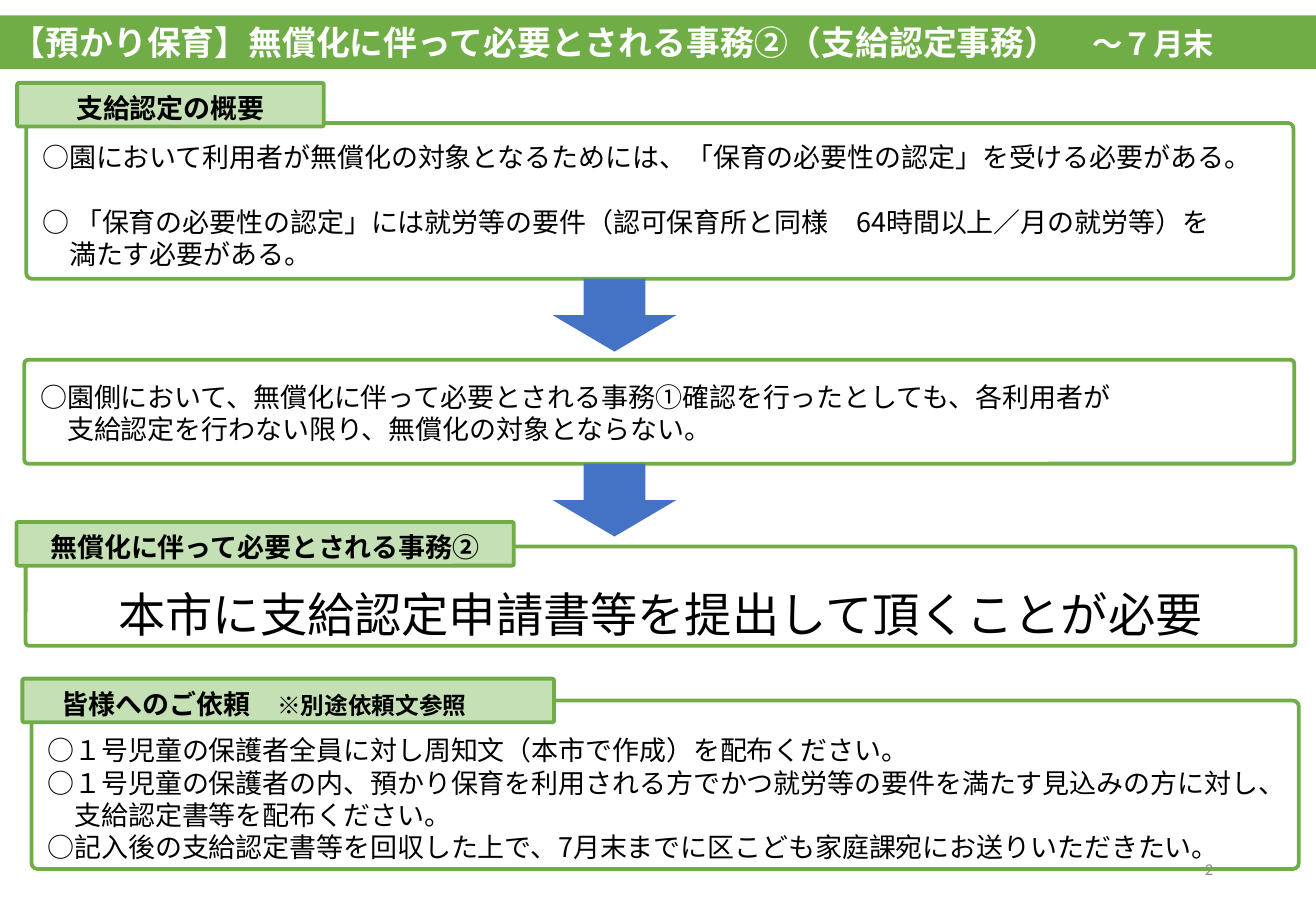
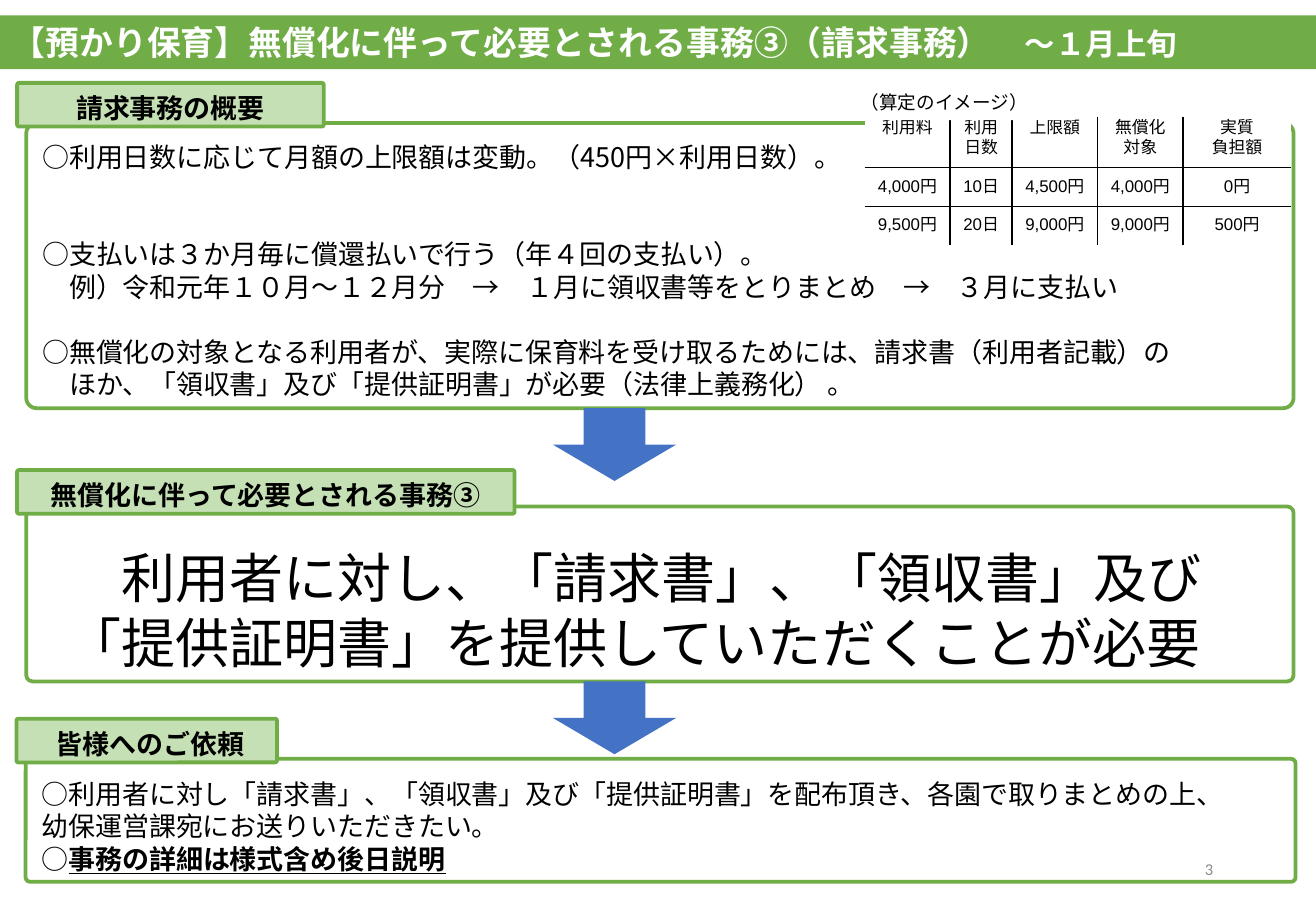
from dataclasses import dataclass
from lxml.etree import SubElement
from pptx import Presentation
from pptx.dml.color import RGBColor
from pptx.enum.shapes import MSO_SHAPE as SHAPE
from pptx.enum.text import MSO_ANCHOR as ANCHOR, PP_ALIGN as ALIGN
from pptx.oxml.ns import qn
from pptx.util import Inches, Pt


@dataclass(frozen=True)
class Theme:
    green: str = "70AD47"
    pale: str = "C5E0B4"
    blue: str = "4472C4"
    white: str = "FFFFFF"
    black: str = "000000"
    grey: str = "8C8C8C"
    jp: str = "Noto Sans CJK JP"
    latin: str = "Arial"
    number: str = "Calibri"
    title: float = 20
    date: float = 18
    body: float = 16
    note: float = 14
    label: float = 11
    cell: float = 10
    page: float = 9.8
    leading: float = 1.2
    border: float = 2.25


T = Theme()
prs = Presentation()
prs.slide_width, prs.slide_height = Inches(10.83), Inches(7.5)
# Grid of 100 columns by 100 rows
COL, ROW = prs.slide_width / 100, prs.slide_height / 100


def write(tf, lines, size=T.body, bold=False, color=T.black, font=T.jp, align=ALIGN.LEFT,
          anchor=ANCHOR.TOP, inset=(0.1, 0.05, 0.1, 0.05), gaps=None):
    """Each line is a string or a list of (text, format) runs; gaps maps a line to skipped lines."""
    tf.word_wrap, tf.vertical_anchor = True, anchor
    tf.margin_left, tf.margin_top, tf.margin_right, tf.margin_bottom = map(Inches, inset)
    for i, line in enumerate(lines):
        p = tf.paragraphs[0] if i == 0 else tf.add_paragraph()
        p.alignment, p.line_spacing = align, Pt(size * T.leading)
        p.space_before = Pt(size * T.leading * (gaps or {}).get(i, 0))
        for text, fmt in [(line, {})] if isinstance(line, str) else line:
            r = p.add_run()
            r.text = text
            r.font.name, r.font.size = font, Pt(fmt.get("size", size))
            r.font.bold, r.font.underline = fmt.get("bold", bold), fmt.get("underline", False)
            r.font.color.rgb = RGBColor.from_string(color)
            SubElement(r.font._element, qn("a:ea")).set("typeface", T.jp)


def box(s, kind, x, y, w, h, fill=None, line=None, adj=None):
    sp = s.shapes.add_shape(kind, int(x * COL), int(y * ROW), int(w * COL), int(h * ROW))
    sp.shadow.inherit = False
    if adj:
        sp.adjustments[0] = adj
    if fill:
        sp.fill.solid()
        sp.fill.fore_color.rgb = RGBColor.from_string(fill)
    else:
        sp.fill.background()
    if line:
        sp.line.color.rgb, sp.line.width = RGBColor.from_string(line), Pt(T.border)
    else:
        sp.line.fill.background()
    return sp


# Content: panels (x, y, w, h) with an optional tab (y, w) and arrow below
DECK = [
    dict(page="2", title="【預かり保育】無償化に伴って必要とされる事務②（支給認定事務）　", date="～７月末", panels=[
        dict(at=(2, 13.5, 96.3, 17.1), tab=(9.1, 23.3), head=["支給認定の概要"], arrow=True,
             text_y=14.8, gaps={1: 1}, lines=[
                 "○園において利用者が無償化の対象となるためには、「保育の必要性の認定」を受ける必要がある。",
                 "○ 「保育の必要性の認定」には就労等の要件（認可保育所と同様　64時間以上／月の就労等）を",
                 "　満たす必要がある。"]),
        dict(at=(1.85, 39.5, 96.5, 11.4), arrow=True, text_y=41.1, lines=[
            "○園側において、無償化に伴って必要とされる事務①確認を行ったとしても、各利用者が",
            "　支給認定を行わない限り、無償化の対象とならない。"]),
        dict(at=(1.95, 60, 96.5, 10.9), tab=(57.3, 37.8), head=["無償化に伴って必要とされる事務②"],
             text_x=1.55, text_y=63.6, size=28, align=ALIGN.CENTER,
             lines=["本市に支給認定申請書等を提出して頂くことが必要"]),
        dict(at=(2.4, 76.9, 96.3, 18.5), tab=(74.5, 40.4), tab_align=ALIGN.LEFT,
             head=[[("　皆様へのご依頼　", {}), ("※別途依頼文参照", {"size": T.note})]],
             text_y=79.9, lines=[
                 "○１号児童の保護者全員に対し周知文（本市で作成）を配布ください。",
                 "○１号児童の保護者の内、預かり保育を利用される方でかつ就労等の要件を満たす見込みの方に対し、",
                 "　支給認定書等を配布ください。",
                 "○記入後の支給認定書等を回収した上で、7月末までに区こども家庭課宛にお送りいただきたい。"]),
    ]),
    dict(page="3", title="【預かり保育】無償化に伴って必要とされる事務③（請求事務）　", date="～１月上旬", panels=[
        dict(at=(2, 13.5, 96.3, 31.3), tab=(9.1, 23.3), head=["請求事務の概要"], arrow=True,
             text_y=14.8, gaps={1: 2, 3: 1}, lines=[
                 "○利用日数に応じて月額の上限額は変動。（450円×利用日数）。",
                 "○支払いは３か月毎に償還払いで行う（年４回の支払い）。",
                 "　例）令和元年１０月～１２月分　→　１月に領収書等をとりまとめ　→　３月に支払い",
                 "○無償化の対象となる利用者が、実際に保育料を受け取るためには、請求書（利用者記載）の",
                 "　ほか、「領収書」及び「提供証明書」が必要（法律上義務化） 。"]),
        dict(at=(2, 55.6, 96.3, 19.2), tab=(51.6, 37.8), head=["無償化に伴って必要とされる事務③"],
             arrow=True, text_x=4.2, text_y=59.1, size=32, lines=[
                 "　利用者に対し、「請求書」、「領収書」及び",
                 "「提供証明書」を提供していただくことが必要"]),
        dict(at=(1.95, 83.3, 96.5, 13.5), tab=(78.9, 19.8), tab_align=ALIGN.LEFT,
             head=["　皆様へのご依頼"], text_y=84.7, lines=[
                 "○利用者に対し「請求書」、「領収書」及び「提供証明書」を配布頂き、各園で取りまとめの上、",
                 "幼保運営課宛にお送りいただきたい。",
                 [("○", {}), ("事務の詳細は様式含め後日説明", {"bold": True, "underline": True})]]),
    ]),
]

for page in DECK:
    s = prs.slides.add_slide(prs.slide_layouts[6])

    # Title band
    band = box(s, SHAPE.RECTANGLE, 0, 1.7, 100, 5.9, T.green)
    write(band.text_frame, [[(page["title"], {}), (page["date"], {"size": T.date})]],
          size=T.title, bold=True, color=T.white, anchor=ANCHOR.MIDDLE)

    # Panels with their arrows, tabs and text
    for panel in page["panels"]:
        x, y, w, h = panel["at"]
        box(s, SHAPE.ROUNDED_RECTANGLE, x, y, w, h, line=T.green, adj=0.036)
        if panel.get("arrow"):
            box(s, SHAPE.DOWN_ARROW, 42, y + h, 9.4, 8, T.blue)
        if "tab" in panel:
            tab_y, tab_w = panel["tab"]
            tab = box(s, SHAPE.ROUNDED_RECTANGLE, x - 0.7, tab_y, tab_w, 4.8, T.pale, T.green, 0.042)
            write(tab.text_frame, panel["head"], bold=True, anchor=ANCHOR.MIDDLE,
                  align=panel.get("tab_align", ALIGN.CENTER), inset=(0.1, 0.1, 0.1, 0.05))
        text_x, text_y = panel.get("text_x", x + 0.3), panel["text_y"]
        tb = s.shapes.add_textbox(int(text_x * COL), int(text_y * ROW),
                                  int(min(97.3, 100 - text_x) * COL), int((y + h - text_y) * ROW))
        write(tb.text_frame, panel["lines"], size=panel.get("size", T.body),
              align=panel.get("align", ALIGN.LEFT), gaps=panel.get("gaps"))

    # Page number
    tb = s.shapes.add_textbox(int(70.6 * COL), int(92.7 * ROW), int(22.5 * COL), int(5.3 * ROW))
    write(tb.text_frame, [page["page"]], size=T.page, color=T.grey, font=T.number,
          align=ALIGN.RIGHT, anchor=ANCHOR.MIDDLE)

# Worked example on the last slide
ROWS = [
    ["利用料", "利用\n日数", "上限額", "無償化\n対象", "実質\n負担額"],
    ["4,000円", "10日", "4,500円", "4,000円", "0円"],
    ["9,500円", "20日", "9,000円", "9,000円", "500円"],
]
COL_W, ROW_H = [6.5, 4.7, 6.5, 6.5, 8.2], [5.6, 4.25, 4.25]
frame = s.shapes.add_table(len(ROW_H), len(COL_W), int(65.7 * COL), int(12.8 * ROW),
                           int(sum(COL_W) * COL), int(sum(ROW_H) * ROW))
tbl = frame.table
tbl.first_row = tbl.horz_banding = False
for column, w in zip(tbl.columns, COL_W):
    column.width = int(w * COL)
for row, h in zip(tbl.rows, ROW_H):
    row.height = int(h * ROW)
for i, row in enumerate(ROWS):
    for j, text in enumerate(row):
        cell = tbl.cell(i, j)
        pad = 0.01 if i == 0 else 0.05
        write(cell.text_frame, text.split("\n"), size=T.cell, font=T.latin, align=ALIGN.CENTER)
        cell.margin_left = cell.margin_right = Inches(0.05)
        cell.margin_top = cell.margin_bottom = Inches(pad)
        cell.vertical_anchor = ANCHOR.TOP if i == 0 else ANCHOR.MIDDLE
        # Inner rules only
        inner = {"a:lnL": j > 0, "a:lnR": j < len(COL_W) - 1,
                 "a:lnT": i > 0, "a:lnB": i < len(ROW_H) - 1}
        tc_pr = cell._tc.get_or_add_tcPr()
        for tag, shown in inner.items():
            ln = SubElement(tc_pr, qn(tag), w=str(Pt(1)))
            paint = SubElement(ln, qn("a:solidFill" if shown else "a:noFill"))
            if shown:
                SubElement(paint, qn("a:srgbClr"), val=T.black)
        cell.fill.solid()
        cell.fill.fore_color.rgb = RGBColor.from_string(T.white)

label = box(s, SHAPE.RECTANGLE, 64.5, 9.3, 17.2, 3.9, T.white)
write(label.text_frame, ["（算定のイメージ）"], size=T.label)

prs.save("out.pptx")
